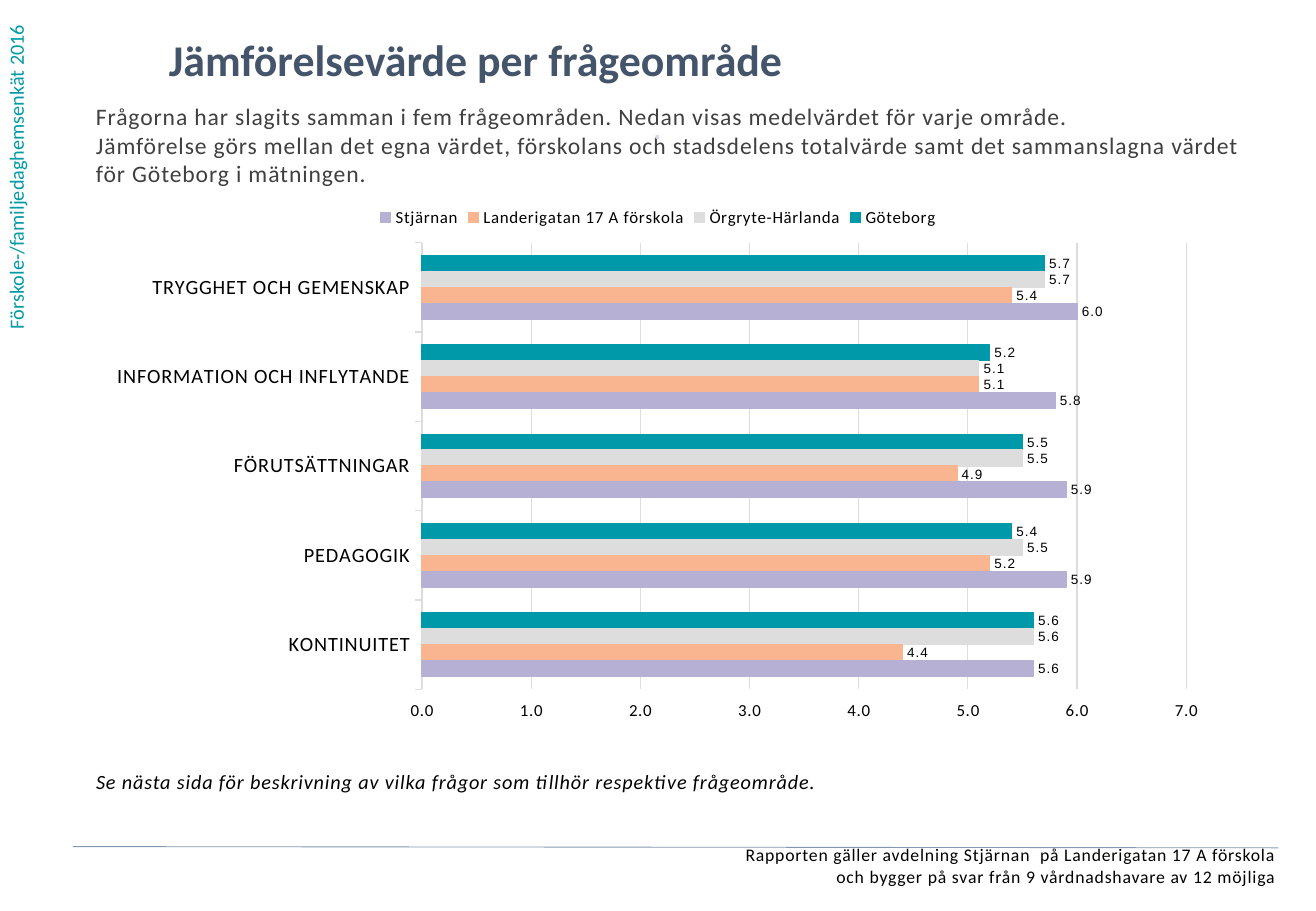
from dataclasses import dataclass

import lxml.etree
import pptx
import pptx.chart.data
import pptx.dml.color
import pptx.enum.chart
import pptx.enum.shapes
import pptx.enum.text
import pptx.oxml
import pptx.oxml.ns
import pptx.util

EMU_PER_PX = 9144
BLACK = "000000"
GRID_GREY = "DDDDDD"
NUMBER_FORMAT = "0.0;0.0"


@dataclass(frozen=True)
class Style:
    size: float
    colour: str = BLACK
    bold: bool = False
    italic: bool = False
    spacing: int = 50
    name: str = "Calibri"


@dataclass(frozen=True)
class Label:
    left: int
    top: int
    width: int
    height: int
    lines: tuple[str, ...]
    style: Style
    align: str = "LEFT"
    upright: bool = False


@dataclass(frozen=True)
class Area:
    name: str
    colour: str
    values: tuple[float, ...]


LABELS = (
    Label(3, 1, 21, 270, ("Förskole-/familjedaghemsenkät 2016",),
          Style(12, "009BA4", spacing=0), upright=True),
    Label(139, 27, 834, 57, ("Jämförelsevärde per frågeområde",),
          Style(26, "44546A", bold=True, spacing=0)),
    Label(79, 84, 960, 75, (
        "Frågorna har slagits samman i fem frågeområden. Nedan visas medelvärdet för varje område.",
        "Jämförelse görs mellan det egna värdet, förskolans och stadsdelens totalvärde "
        "samt det sammanslagna värdet för Göteborg i mätningen.",
    ), Style(14, "404040")),
    Label(12, 695, 1038, 43, (
        "Rapporten gäller avdelning Stjärnan  på Landerigatan 17 A förskola",
        "och bygger på svar från 9 vårdnadshavare av 12 möjliga",
    ), Style(10.5), align="RIGHT"),
    Label(387, 102, 308, 39, ("⋅",), Style(12, "D2D9E2", bold=True), align="CENTER"),
    Label(79, 633, 925, 30, (
        "Se nästa sida för beskrivning av vilka frågor som tillhör respektive frågeområde.",
    ), Style(12, italic=True)),
)

CATEGORIES = (
    "TRYGGHET OCH GEMENSKAP",
    "INFORMATION OCH INFLYTANDE",
    "FÖRUTSÄTTNINGAR",
    "PEDAGOGIK",
    "KONTINUITET",
)
AREAS = (
    Area("Göteborg", "0099AA", (5.7, 5.2, 5.5, 5.4, 5.6)),
    Area("Örgryte-Härlanda", GRID_GREY, (5.7, 5.1, 5.5, 5.5, 5.6)),
    Area("Landerigatan 17 A förskola", "F9B590", (5.4, 5.1, 4.9, 5.2, 4.4)),
    Area("Stjärnan", "B6B1D4", (6.0, 5.8, 5.9, 5.9, 5.6)),
)
PLOT_LAYOUT = {"x": 0.29, "y": 0.09, "w": 0.68, "h": 0.83}


def px(length: int) -> pptx.util.Emu:
    """Turn px into EMU."""
    return pptx.util.Emu(length * EMU_PER_PX)


def rgb(colour: str) -> pptx.dml.color.RGBColor:
    """Turn a hex string into a colour."""
    return pptx.dml.color.RGBColor.from_string(colour)


def set_font(font, style: Style) -> None:
    """Apply a text style to a font."""
    font.name = style.name
    font.size = pptx.util.Pt(style.size)
    font.bold = style.bold
    font.italic = style.italic
    font.color.rgb = rgb(style.colour)
    font._rPr.set("spc", str(style.spacing))


def set_line(line, colour: str, width: float) -> None:
    """Give a line its colour and its width in points."""
    line.color.rgb = rgb(colour)
    line.width = pptx.util.Pt(width)


def add_label(page, label: Label) -> None:
    """Add one text box with a paragraph for each line."""
    box = page.shapes.add_textbox(
        px(label.left), px(label.top), px(label.width), px(label.height))
    frame = box.text_frame
    frame.word_wrap = True
    frame.margin_left = frame.margin_right = 0
    frame.margin_top = frame.margin_bottom = 0
    if label.upright:
        frame._txBody.bodyPr.set("vert", "vert270")
    frame.text = "\n".join(label.lines)
    for para in frame.paragraphs:
        para.alignment = pptx.enum.text.PP_ALIGN[label.align]
        set_font(para.font, label.style)


def place_plot(chart) -> None:
    """Fix the inner plot rectangle as shares of the chart."""
    plot_area = chart._chartSpace.chart.plotArea
    tag = pptx.oxml.ns.qn
    for old_layout in plot_area.findall(tag("c:layout")):
        plot_area.remove(old_layout)
    layout = lxml.etree.Element(tag("c:layout"))
    manual = lxml.etree.SubElement(layout, tag("c:manualLayout"))
    settings = {"layoutTarget": "inner", "xMode": "edge", "yMode": "edge", **PLOT_LAYOUT}
    for key, value in settings.items():
        lxml.etree.SubElement(manual, tag(f"c:{key}")).set("val", str(value))
    plot_area.insert(0, layout)


def style_axes(chart) -> None:
    """Style the category and value axes."""
    category_axis = chart.category_axis
    category_axis.reverse_order = True
    category_axis.has_major_gridlines = False
    set_line(category_axis.format.line, GRID_GREY, 0.75)
    set_font(category_axis.tick_labels.font, Style(12))
    value_axis = chart.value_axis
    value_axis.minimum_scale = 0
    value_axis.maximum_scale = 7
    value_axis.major_unit = 1
    value_axis.tick_label_position = pptx.enum.chart.XL_TICK_LABEL_POSITION.HIGH
    value_axis.format.line.fill.background()
    set_line(value_axis.major_gridlines.format.line, GRID_GREY, 0.75)
    value_axis.tick_labels.number_format = NUMBER_FORMAT
    value_axis.tick_labels.number_format_is_linked = False
    set_font(value_axis.tick_labels.font, Style(10))
    for axis in (category_axis, value_axis):
        axis.major_tick_mark = pptx.enum.chart.XL_TICK_MARK.OUTSIDE


def add_area_chart(page) -> None:
    """Add the bar chart that compares the question areas."""
    data = pptx.chart.data.CategoryChartData(number_format=NUMBER_FORMAT)
    data.categories = CATEGORIES
    for area in AREAS:
        data.add_series(area.name, area.values)
    chart = page.shapes.add_chart(
        pptx.enum.chart.XL_CHART_TYPE.BAR_CLUSTERED,
        px(79), px(160), px(925), px(443), data).chart
    set_font(chart.font, Style(10))
    chart.has_title = False
    chart.has_legend = True
    chart.legend.position = pptx.enum.chart.XL_LEGEND_POSITION.TOP
    chart.legend.include_in_layout = False
    set_font(chart.legend.font, Style(10))
    plot = chart.plots[0]
    plot.gap_width = 162
    plot.overlap = 0
    plot.vary_by_categories = False
    for area, series in zip(AREAS, plot.series):
        series.format.fill.solid()
        series.format.fill.fore_color.rgb = rgb(area.colour)
        set_line(series.format.line, area.colour, 0.75)
        labels = series.data_labels
        labels.show_value = True
        labels.number_format = NUMBER_FORMAT
        labels.number_format_is_linked = False
        labels.position = pptx.enum.chart.XL_LABEL_POSITION.OUTSIDE_END
        set_font(labels.font, Style(8, name="Arial"))
    style_axes(chart)
    place_plot(chart)


def add_footer_rule(page) -> None:
    """Add the thin line above the footer."""
    rule = page.shapes.add_connector(
        pptx.enum.shapes.MSO_CONNECTOR.STRAIGHT, px(60), px(697), px(1052), px(698))
    set_line(rule.line, "8497B0", 0.5)
    lxml.etree.SubElement(rule._element.spPr, pptx.oxml.ns.qn("a:effectLst"))


def main() -> None:
    """Build the slide and save it."""
    deck = pptx.Presentation()
    deck.slide_width = px(1083)
    deck.slide_height = px(750)
    page = deck.slides.add_slide(deck.slide_layouts[6])
    for label in LABELS:
        add_label(page, label)
    add_area_chart(page)
    add_footer_rule(page)
    deck.save("out.pptx")


if __name__ == "__main__":
    main()
